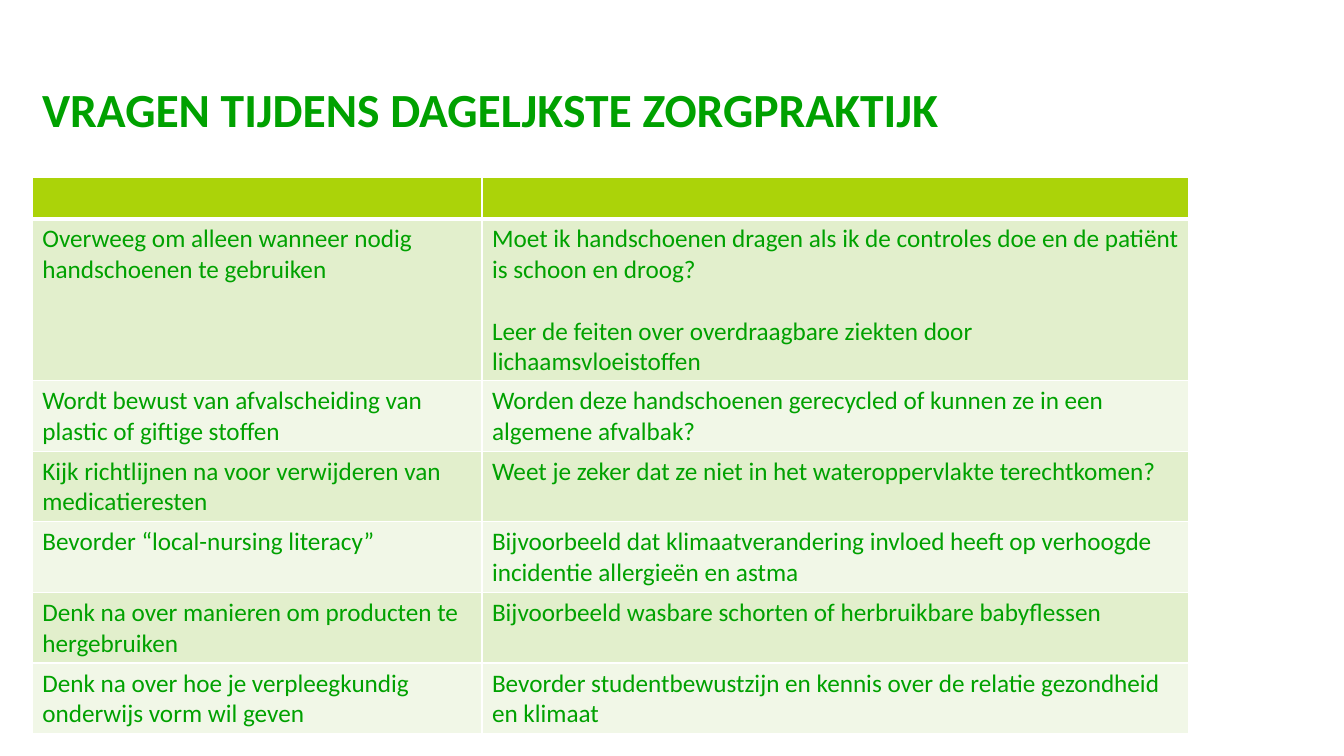
from lxml import etree
from pptx import Presentation
from pptx.dml.color import RGBColor
from pptx.enum.text import MSO_ANCHOR
from pptx.oxml.ns import qn
from pptx.util import Inches, Pt

COLORS = {
    "text": "00A100",
    "header": "ABD309",
    "odd_row": "E2EFCC",
    "even_row": "F1F7E7",
    "border": "FFFFFF",
}
FONT = "Calibri"
ROWS = [
    ("", ""),
    ("Overweeg om alleen wanneer nodig handschoenen te gebruiken",
     "Moet ik handschoenen dragen als ik de controles doe en de patiënt is schoon en droog?\n"
     "Leer de feiten over overdraagbare ziekten door lichaamsvloeistoffen"),
    ("Wordt bewust van afvalscheiding van plastic of giftige stoffen",
     "Worden deze handschoenen gerecycled of kunnen ze in een algemene afvalbak?"),
    ("Kijk richtlijnen na voor verwijderen van medicatieresten",
     "Weet je zeker dat ze niet in het wateroppervlakte terechtkomen?"),
    ("Bevorder “local-nursing literacy”",
     "Bijvoorbeeld dat klimaatverandering invloed heeft op verhoogde incidentie allergieën en astma"),
    ("Denk na over manieren om producten te hergebruiken",
     "Bijvoorbeeld wasbare schorten of herbruikbare babyflessen"),
    ("Denk na over hoe je verpleegkundig onderwijs vorm wil geven",
     "Bevorder studentbewustzijn en kennis over de relatie gezondheid en klimaat"),
]
COLUMN_WIDTHS = (4.46, 7.01)
ROW_HEIGHT = 0.41


def style_font(font, size, bold=False):
    font.name = FONT
    font.size = Pt(size)
    font.bold = bold
    font.color.rgb = RGBColor.from_string(COLORS["text"])


def add_borders(cell, top, bottom):
    """Draw the four cell borders; top and bottom are widths in points."""
    properties = cell._tc.get_or_add_tcPr()
    for side, width in (("L", 1), ("R", 1), ("T", top), ("B", bottom)):
        line = etree.SubElement(properties, qn(f"a:ln{side}"), w=str(Pt(width)))
        fill = etree.SubElement(line, qn("a:solidFill"))
        etree.SubElement(fill, qn("a:srgbClr"), val=COLORS["border"])


presentation = Presentation()
presentation.slide_width = Inches(13.33)
presentation.slide_height = Inches(7.5)
slide = presentation.slides.add_slide(presentation.slide_layouts[6])

# Title
title = slide.shapes.add_textbox(Inches(0.32), Inches(0.35), Inches(11.47), Inches(1.07))
title_frame = title.text_frame
title_frame.word_wrap = True
title_frame.vertical_anchor = MSO_ANCHOR.BOTTOM
title_frame.text = "VRAGEN TIJDENS DAGELJKSTE ZORGPRAKTIJK"
title_frame.paragraphs[0].line_spacing = 0.9
style_font(title_frame.paragraphs[0].runs[0].font, 34, bold=True)

# Table: rows grow with their text
table = slide.shapes.add_table(
    len(ROWS), len(COLUMN_WIDTHS), Inches(0.32), Inches(1.76),
    Inches(sum(COLUMN_WIDTHS)), Inches(ROW_HEIGHT * len(ROWS)),
).table
for column, width in zip(table.columns, COLUMN_WIDTHS):
    column.width = Inches(width)

for row_index, texts in enumerate(ROWS):
    table.rows[row_index].height = Inches(ROW_HEIGHT)
    if row_index == 0:
        color = COLORS["header"]
    else:
        color = COLORS["odd_row" if row_index % 2 else "even_row"]
    for column_index, text in enumerate(texts):
        cell = table.cell(row_index, column_index)
        add_borders(cell, top=3 if row_index == 1 else 1, bottom=3 if row_index == 0 else 1)
        cell.fill.solid()
        cell.fill.fore_color.rgb = RGBColor.from_string(color)
        cell.text_frame.text = text
        for paragraph_index, paragraph in enumerate(cell.text_frame.paragraphs):
            if paragraph_index > 0:
                paragraph.space_before = Pt(22)
            for run in paragraph.runs:
                style_font(run.font, 18)

presentation.save("out.pptx")
